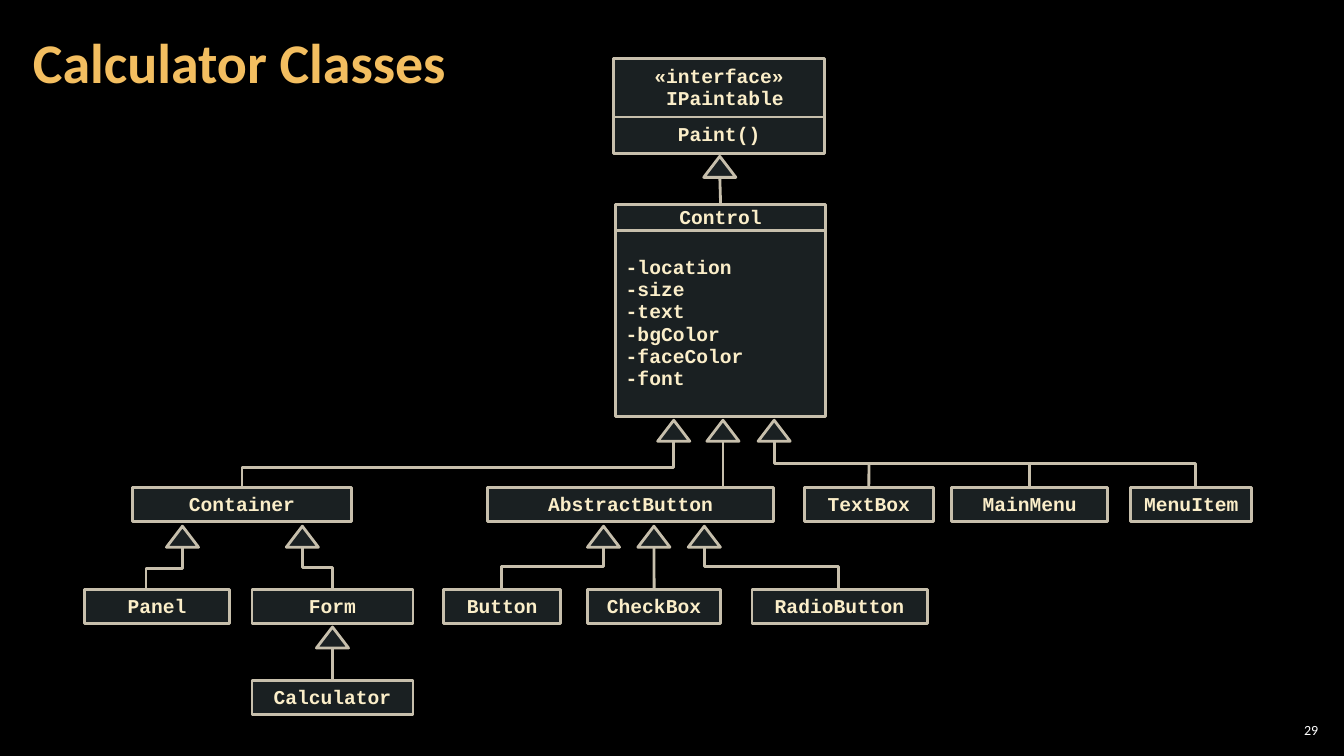
"""Build the class diagram slide of a calculator program."""
from dataclasses import dataclass

from lxml.etree import SubElement
from pptx import Presentation
from pptx.dml.color import RGBColor
from pptx.enum.shapes import MSO_CONNECTOR, MSO_SHAPE
from pptx.enum.text import MSO_ANCHOR, MSO_AUTO_SIZE, PP_ALIGN
from pptx.oxml.ns import qn
from pptx.shapes.autoshape import Shape
from pptx.slide import Slide
from pptx.util import Cm, Pt

BACKGROUND, GOLD, CREAM = "000000", "F3BE60", "FBEEC9"
FILL, LINE, WHITE = "B5DBE5", "C7BFAC", "FFFFFF"
FILL_OPACITY = 15
HEAD_WIDTH, HEAD_HEIGHT = 0.81, 0.53
ROW_HEIGHT = 0.86
CLASS_ROW, SUBCLASS_ROW, LEAF_ROW = 12.28, 14.85, 17.15
CONTROL_TIPS, CLASS_TIPS, FORM_TIPS = 10.59, 13.26, 15.8
MENU_BUS = 11.68

Point = tuple[float, float]


@dataclass(frozen=True)
class ClassBox:
    text: str
    left: float
    top: float
    width: float
    height: float = ROW_HEIGHT
    align: PP_ALIGN = PP_ALIGN.CENTER


@dataclass(frozen=True)
class Bend:
    tip_x: float
    tip_y: float
    bus_y: float
    child_x: float
    child_y: float


@dataclass(frozen=True)
class Stem:
    child: str
    tip_x: float
    tip_y: float


BOXES = [
    ClassBox("«interface»\n IPaintable", 15.47, 1.47, 5.31, 1.48),
    ClassBox("Paint()", 15.47, 2.95, 5.31, 0.91),
    ClassBox("-location\n-size\n-text\n-bgColor\n-faceColor\n-font",
             15.52, 5.81, 5.28, 4.68, PP_ALIGN.LEFT),
    ClassBox("Control", 15.52, 5.16, 5.28, 0.65),
    ClassBox("Container", 3.33, CLASS_ROW, 5.54),
    ClassBox("AbstractButton", 12.29, CLASS_ROW, 7.21),
    ClassBox("TextBox", 20.27, CLASS_ROW, 3.25),
    ClassBox("MainMenu", 23.98, CLASS_ROW, 3.94),
    ClassBox("MenuItem", 28.5, CLASS_ROW, 3.05),
    ClassBox("Panel", 2.13, SUBCLASS_ROW, 3.66),
    ClassBox("Form", 6.35, SUBCLASS_ROW, 4.06),
    ClassBox("Button", 11.18, SUBCLASS_ROW, 2.95),
    ClassBox("CheckBox", 14.81, SUBCLASS_ROW, 3.35),
    ClassBox("RadioButton", 18.95, SUBCLASS_ROW, 4.42),
    ClassBox("Calculator", 6.35, LEAF_ROW, 4.06),
]
BENDS = [
    Bend(16.98, CONTROL_TIPS, 11.79, 6.1, CLASS_ROW),
    Bend(19.51, CONTROL_TIPS, MENU_BUS, 30.12, CLASS_ROW),
    Bend(4.6, CLASS_TIPS, 14.33, 3.68, SUBCLASS_ROW),
    Bend(7.62, CLASS_TIPS, 14.3, 8.38, SUBCLASS_ROW),
    Bend(15.21, CLASS_TIPS, 14.28, 12.63, SUBCLASS_ROW),
    Bend(17.75, CLASS_TIPS, 14.28, 21.14, SUBCLASS_ROW),
]
STEMS = [
    Stem("Control", 18.14, 3.94),
    Stem("CheckBox", 16.48, CLASS_TIPS),
    Stem("Calculator", 8.38, FORM_TIPS),
]
BUTTON_STEM_X = 18.22
MENU_DROPS = {"TextBox": 21.9, "MainMenu": 25.95}


def color(value: str) -> RGBColor:
    """Turn a hex string into a colour."""
    return RGBColor.from_string(value)


def style_outline(shape: Shape, filled: bool = True) -> None:
    """Give a shape the diagram's line and, if asked, its translucent fill."""
    shape.shadow.inherit = False
    shape.line.color.rgb = color(LINE)
    shape.line.width = Pt(2)
    if not filled:
        shape.fill.background()
        return
    shape.fill.solid()
    shape.fill.fore_color.rgb = color(FILL)
    tint = shape._element.spPr.find(qn("a:solidFill")).find(qn("a:srgbClr"))
    SubElement(tint, qn("a:alpha"), val=str(FILL_OPACITY * 1000))


def add_box(slide: Slide, box: ClassBox) -> Shape:
    """Draw one compartment of a class."""
    shape = slide.shapes.add_shape(MSO_SHAPE.RECTANGLE, Cm(box.left), Cm(box.top),
                                   Cm(box.width), Cm(box.height))
    style_outline(shape)
    frame = shape.text_frame
    frame.text = box.text
    frame.word_wrap = True
    frame.vertical_anchor = MSO_ANCHOR.MIDDLE
    for paragraph in frame.paragraphs:
        paragraph.alignment = box.align
        paragraph.line_spacing = 0.95
        paragraph.font.name = "Courier New"
        paragraph.font.size = Pt(14)
        paragraph.font.bold = True
        paragraph.font.color.rgb = color(CREAM)
    return shape


def add_outline(slide: Slide, points: list[Point], closed: bool) -> None:
    """Draw a filled polygon or an open bent line."""
    start, *rest = [(Cm(x), Cm(y)) for x, y in points]
    builder = slide.shapes.build_freeform(*start)
    builder.add_line_segments(rest, close=closed)
    style_outline(builder.convert_to_shape(), filled=closed)


def add_head(slide: Slide, tip_x: float, tip_y: float) -> None:
    """Draw the hollow triangle that marks inheritance."""
    base = tip_y + HEAD_HEIGHT
    half = HEAD_WIDTH / 2
    add_outline(slide, [(tip_x - half, base), (tip_x + half, base), (tip_x, tip_y)], True)


def add_bend(slide: Slide, bend: Bend) -> None:
    """Draw a bent inheritance line with its head."""
    add_outline(slide, [(bend.tip_x, bend.tip_y + HEAD_HEIGHT), (bend.tip_x, bend.bus_y),
                        (bend.child_x, bend.bus_y), (bend.child_x, bend.child_y)], False)
    add_head(slide, bend.tip_x, bend.tip_y)


def add_stem(slide: Slide, x: float, top: float, bottom: float,
             child: Shape | None = None) -> None:
    """Draw a straight line up from a class, joined to its top if given."""
    connector = slide.shapes.add_connector(MSO_CONNECTOR.STRAIGHT,
                                           Cm(x), Cm(bottom), Cm(x), Cm(top))
    if child is not None:
        connector.begin_connect(child, 0)
    connector.line.color.rgb = color(LINE)
    connector.line.width = Pt(2)
    SubElement(connector._element.spPr, qn("a:effectLst"))


def add_title(slide: Slide) -> None:
    """Place and format the title."""
    title = slide.shapes.title
    title.left, title.top, title.width, title.height = Cm(0.53), Cm(0.1), Cm(26.59), Cm(3.07)
    frame = title.text_frame
    frame.text = "Calculator Classes"
    frame.auto_size = MSO_AUTO_SIZE.NONE
    frame.vertical_anchor = MSO_ANCHOR.MIDDLE
    frame.margin_left = frame.margin_right = Cm(0.3)
    frame.margin_top = frame.margin_bottom = Cm(0.1)
    paragraph = frame.paragraphs[0]
    paragraph.alignment = PP_ALIGN.LEFT
    paragraph.line_spacing = 0.9
    paragraph.font.name = "Calibri"
    paragraph.font.size = Pt(40)
    paragraph.font.bold = True
    paragraph.font.color.rgb = color(GOLD)


def add_page_number(slide: Slide) -> None:
    """Write the page number in the lower right corner."""
    frame = slide.shapes.add_textbox(Cm(32.13), Cm(18.14), Cm(1.19), Cm(0.53)).text_frame
    frame.word_wrap = True
    frame.vertical_anchor = MSO_ANCHOR.MIDDLE
    frame.margin_left = frame.margin_right = Cm(0.1)
    frame.margin_top = frame.margin_bottom = Cm(0.1)
    frame.text = "29"
    paragraph = frame.paragraphs[0]
    paragraph.alignment = PP_ALIGN.RIGHT
    paragraph.font.name = "Calibri"
    paragraph.font.size = Pt(10)
    paragraph.font.color.rgb = color(WHITE)


def main() -> None:
    """Build and save the presentation."""
    presentation = Presentation()
    presentation.slide_width, presentation.slide_height = Cm(33.87), Cm(19.05)
    slide = presentation.slides.add_slide(presentation.slide_layouts[5])
    slide.background.fill.solid()
    slide.background.fill.fore_color.rgb = color(BACKGROUND)
    add_title(slide)
    shapes = {box.text: add_box(slide, box) for box in BOXES}
    for bend in BENDS:
        add_bend(slide, bend)
    for stem in STEMS:
        child = shapes[stem.child]
        add_stem(slide, stem.tip_x, stem.tip_y + HEAD_HEIGHT, child.top.cm, child)
        add_head(slide, stem.tip_x, stem.tip_y)
    add_stem(slide, BUTTON_STEM_X, CONTROL_TIPS + HEAD_HEIGHT, CLASS_ROW)
    add_head(slide, BUTTON_STEM_X, CONTROL_TIPS)
    for name, x in MENU_DROPS.items():
        add_stem(slide, x, MENU_BUS, CLASS_ROW, shapes[name])
    add_page_number(slide)
    presentation.save("out.pptx")


if __name__ == "__main__":
    main()
